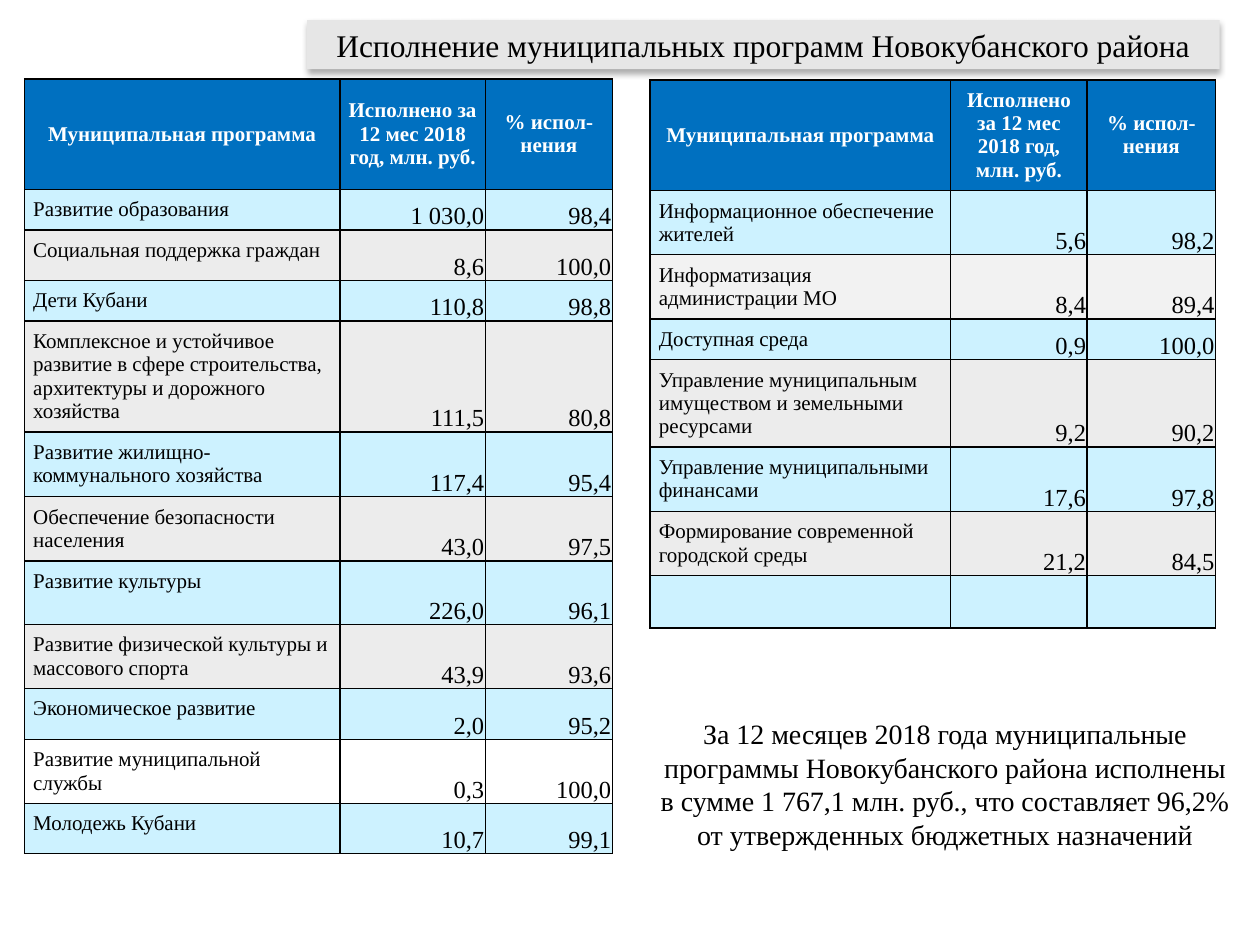
from dataclasses import dataclass

from lxml.etree import SubElement
from pptx import Presentation
from pptx.dml.color import RGBColor
from pptx.enum.text import MSO_ANCHOR, MSO_AUTO_SIZE, PP_ALIGN
from pptx.oxml.ns import qn
from pptx.util import Pt


@dataclass(frozen=True)
class Theme:
    font: str = "Times New Roman"
    black: str = "000000"
    white: str = "FFFFFF"
    title_fill: str = "E6E6E6"
    header_fill: str = "0070C0"
    blue_band: str = "CDF2FF"
    grey_band: str = "ECECEC"
    light_band: str = "F2F2F2"
    title_size: float = 18
    note_size: float = 16
    value_size: float = 14
    label_size: float = 12


theme = Theme()


def write(frame, text, size, color=theme.black, bold=False,
          align=PP_ALIGN.LEFT, anchor=MSO_ANCHOR.TOP):
    frame.word_wrap = True
    frame.vertical_anchor = anchor
    paragraph = frame.paragraphs[0]
    paragraph.alignment = align
    run = paragraph.add_run()
    run.text = text
    run.font.name = theme.font
    run.font.size = Pt(size)
    run.font.bold = bold
    run.font.color.rgb = RGBColor.from_string(color)


def style_cell(cell, fill, margin):
    """Set the margins, black borders and fill of a cell."""
    cell.margin_left = cell.margin_right = cell.margin_top = Pt(margin)
    cell.margin_bottom = Pt(margin if margin > 1 else 0)
    properties = cell._tc.get_or_add_tcPr()
    for side in ("a:lnL", "a:lnR", "a:lnT", "a:lnB"):
        line = SubElement(properties, qn(side), w=str(Pt(1)))
        solid = SubElement(line, qn("a:solidFill"))
        SubElement(solid, qn("a:srgbClr"), val=theme.black)
    cell.fill.solid()
    cell.fill.fore_color.rgb = RGBColor.from_string(fill)


presentation = Presentation()
presentation.slide_width, presentation.slide_height = Pt(720), Pt(540)
slide = presentation.slides.add_slide(presentation.slide_layouts[5])

# Title
title = slide.shapes.title
title.left, title.top, title.width, title.height = Pt(175.5), Pt(11.5), Pt(521.5), Pt(28)
title.fill.solid()
title.fill.fore_color.rgb = RGBColor.from_string(theme.title_fill)
title.text_frame.auto_size = MSO_AUTO_SIZE.NONE
write(title.text_frame, "Исполнение муниципальных программ Новокубанского района",
      theme.title_size, align=PP_ALIGN.CENTER, anchor=MSO_ANCHOR.MIDDLE)
effects = SubElement(title._element.spPr, qn("a:effectLst"))
shadow = SubElement(effects, qn("a:outerShdw"), blurRad=str(Pt(3.5)), dist=str(Pt(2.2)),
                    dir="5400000", rotWithShape="0")
shadow_color = SubElement(shadow, qn("a:srgbClr"), val=theme.black)
SubElement(shadow_color, qn("a:alpha"), val="32000")

# Programme tables: each row is height, programme, amount, percent
header = ("Муниципальная программа", "Исполнено за 12 мес 2018 год, млн. руб.", "% испол-нения")
header_height = 63
right_rows = [
    (36.3, "Информационное обеспечение жителей", "5,6", "98,2"),
    (36.3, "Информатизация администрации МО", "8,4", "89,4"),
    (23, "Доступная среда", "0,9", "100,0"),
    (49.5, "Управление муниципальным имуществом и земельными ресурсами", "9,2", "90,2"),
    (36.3, "Управление муниципальными финансами", "17,6", "97,8"),
    (36.3, "Формирование современной городской среды", "21,2", "84,5"),
    (25, "", "", ""),
]
left_rows = [
    (23, "Развитие образования", "1 030,0", "98,4"),
    (28.7, "Социальная поддержка граждан", "8,6", "100,0"),
    (23, "Дети Кубани", "110,8", "98,8"),
    (63, "Комплексное и устойчивое развитие в сфере строительства, "
         "архитектуры и дорожного хозяйства", "111,5", "80,8"),
    (37, "Развитие жилищно-коммунального хозяйства", "117,4", "95,4"),
    (36.3, "Обеспечение безопасности населения", "43,0", "97,5"),
    (36.3, "Развитие культуры", "226,0", "96,1"),
    (36.7, "Развитие физической культуры и массового спорта", "43,9", "93,6"),
    (29, "Экономическое развитие", "2,0", "95,2"),
    (36.3, "Развитие муниципальной службы", "0,3", "100,0"),
    (28.7, "Молодежь Кубани", "10,7", "99,1"),
]
# Left edge, top, column widths, rows, and the fills that break the banding
tables = [
    (371.5, 45.6, (171.8, 78, 73.4), right_rows, {2: theme.light_band}),
    (14, 45.2, (180.2, 83.2, 72.6), left_rows, {10: theme.white}),
]
for left, top, widths, rows, special_fills in tables:
    height = header_height + sum(row[0] for row in rows)
    table = slide.shapes.add_table(len(rows) + 1, len(widths), Pt(left), Pt(top),
                                   Pt(sum(widths)), Pt(height)).table
    table.first_row = table.horz_banding = False
    for column, width in zip(table.columns, widths):
        column.width = Pt(width)
    for index, (row_height, *texts) in enumerate([(header_height, *header), *rows]):
        table.rows[index].height = Pt(row_height)
        band = theme.blue_band if index % 2 else theme.grey_band
        fill = special_fills.get(index, band) if index else theme.header_fill
        for position, text in enumerate(texts):
            cell = table.cell(index, position)
            is_value = index > 0 and position > 0
            style_cell(cell, fill, 0.7 if is_value else 5)
            if index == 0:
                cell.vertical_anchor = MSO_ANCHOR.MIDDLE
                write(cell.text_frame, text, theme.label_size, theme.white, bold=True,
                      align=PP_ALIGN.CENTER, anchor=MSO_ANCHOR.MIDDLE)
            elif is_value:
                cell.vertical_anchor = MSO_ANCHOR.BOTTOM
                write(cell.text_frame, text, theme.value_size,
                      align=PP_ALIGN.RIGHT, anchor=MSO_ANCHOR.BOTTOM)
            else:
                write(cell.text_frame, text, theme.label_size)

# Summary
summary = slide.shapes.add_textbox(Pt(369.4), Pt(406), Pt(341.3), Pt(85))
summary.text_frame.auto_size = MSO_AUTO_SIZE.SHAPE_TO_FIT_TEXT
write(summary.text_frame,
      "За 12 месяцев 2018 года муниципальные программы Новокубанского района исполнены "
      "в сумме 1 767,1 млн. руб., что составляет 96,2% от утвержденных бюджетных назначений",
      theme.note_size, align=PP_ALIGN.CENTER)

presentation.save("out.pptx")
